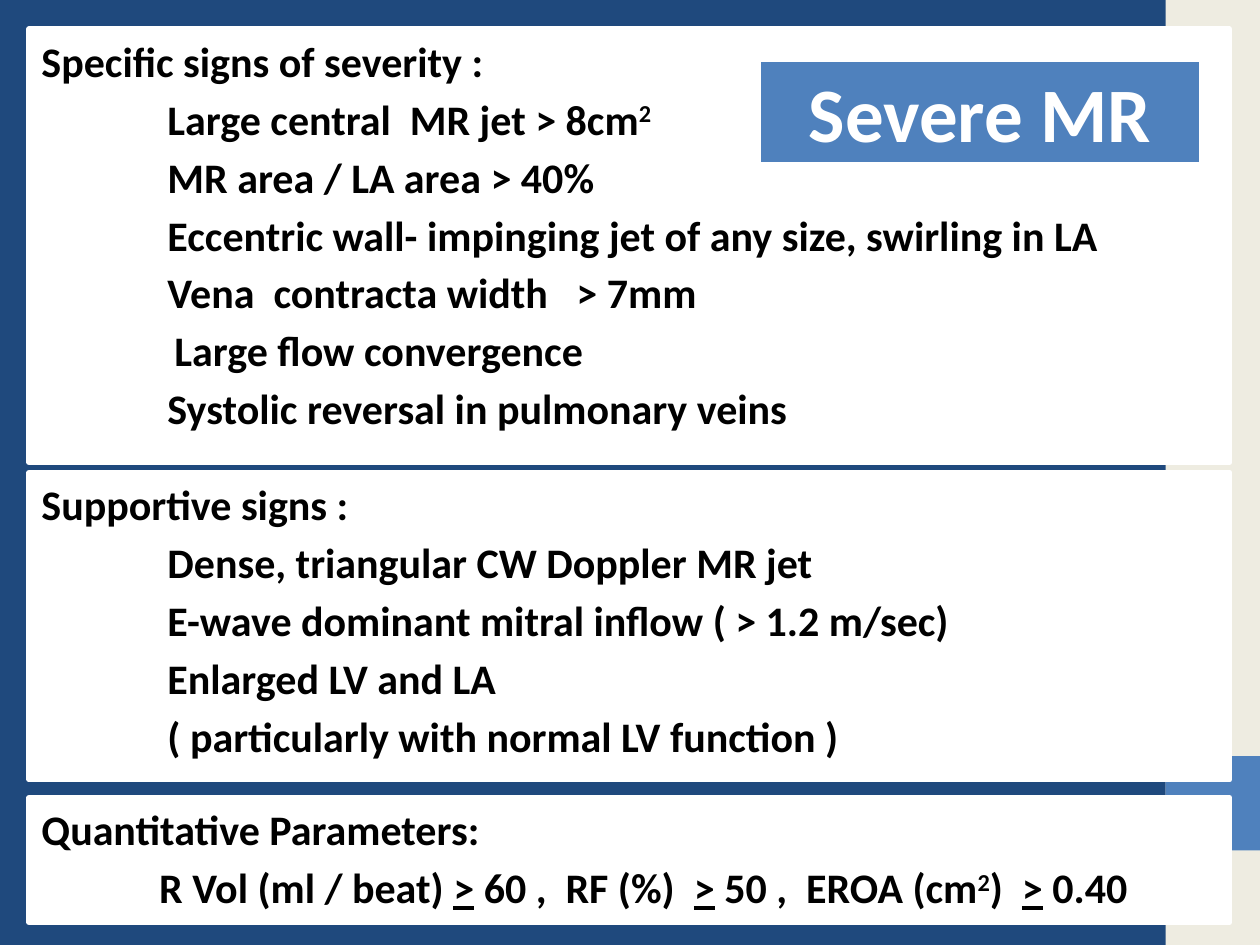
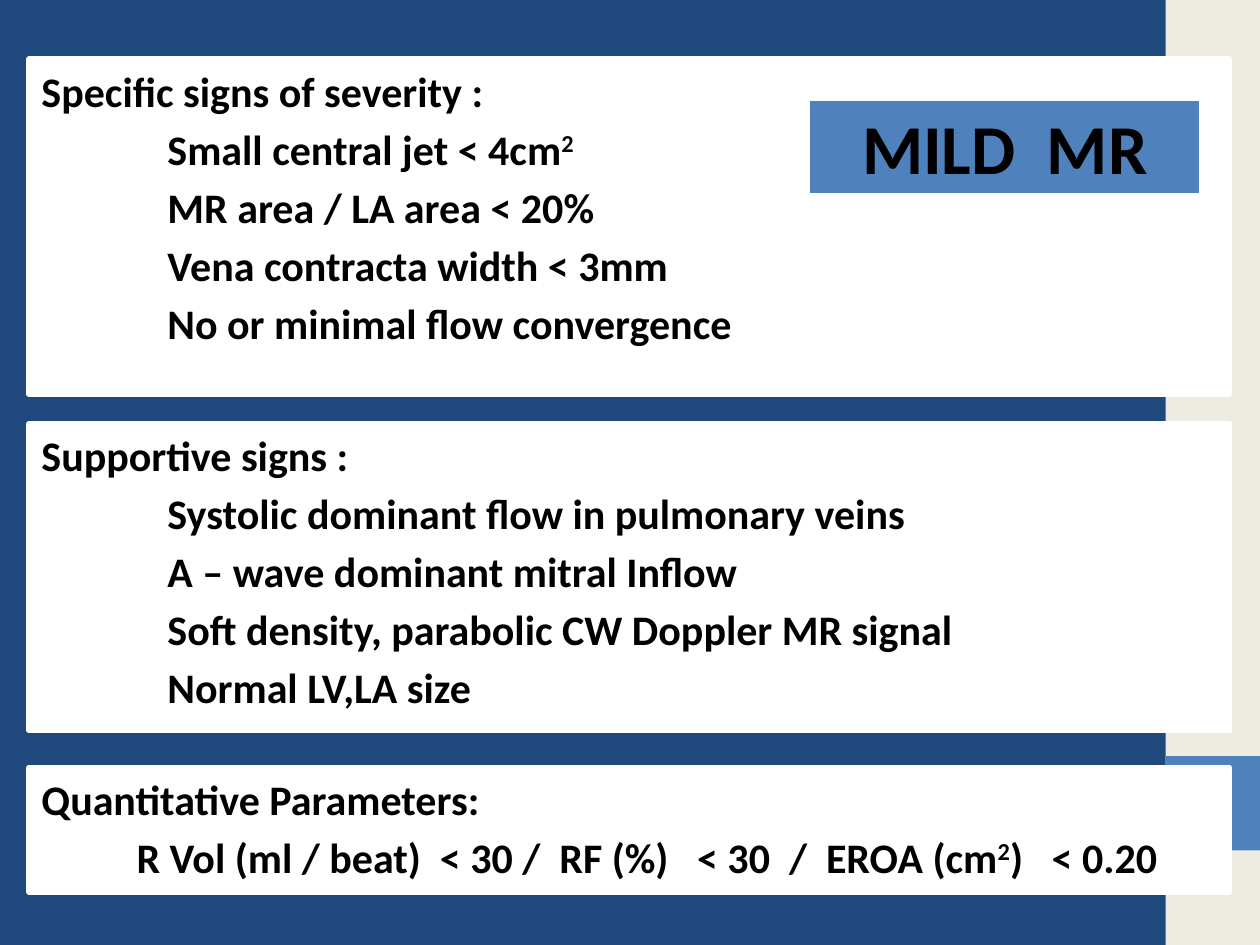
import pptx
import pptx.util
import pptx.dml.color
import pptx.enum.shapes
import pptx.enum.text

Pt = pptx.util.Pt

COLORS = {"navy": "1F497D", "cream": "EEECE1", "blue": "4F81BD", "white": "FFFFFF", "black": "000000"}
PANEL_LEFT, PANEL_WIDTH = 16.6, 686
ITEM_INDENT = 72


def rgb(name):
    return pptx.dml.color.RGBColor.from_string(COLORS[name])


# A "|" separates runs; a leading "^" raises a run and a leading "_" underlines it
def write(paragraph, text, size=24, color="black", indent=0, before=0, align="LEFT"):
    paragraph.alignment = getattr(pptx.enum.text.PP_ALIGN, align)
    paragraph.space_before = Pt(before)
    properties = paragraph._p.get_or_add_pPr()
    properties.set("marL", str(Pt(indent)))
    properties.set("indent", "0")
    for piece in text.split("|"):
        run = paragraph.add_run()
        run.text = piece.lstrip("^_")
        run.font.name = "Calibri"
        run.font.size = Pt(size)
        run.font.bold = True
        run.font.color.rgb = rgb(color)
        if piece.startswith("^"):
            run._r.get_or_add_rPr().set("baseline", "30000")
        if piece.startswith("_"):
            run.font.underline = True


# Each panel: top, height, heading, items as (indent, text)
slides = [
    {
        "title": ("Severe MR", 44, "white", (433.4, 33.8, 253.4, 60.5)),
        "panels": [
            (16.6, 247.7, "Specific signs of severity :", [
                (ITEM_INDENT, "Large central  MR jet > 8cm|^2"),
                (ITEM_INDENT, "MR area / LA area > 40%"),
                (ITEM_INDENT, "Eccentric wall- impinging jet of any size, swirling in LA"),
                (ITEM_INDENT, "Vena  contracta width   > 7mm"),
                (76, "Large flow convergence"),
                (ITEM_INDENT, "Systolic reversal in pulmonary veins"),
            ]),
            (270, 175.7, "Supportive signs :", [
                (ITEM_INDENT, "Dense, triangular CW Doppler MR jet"),
                (ITEM_INDENT, "E-wave dominant mitral inflow ( > 1.2 m/sec)"),
                (ITEM_INDENT, "Enlarged LV and LA"),
                (ITEM_INDENT, "( particularly with normal LV function )"),
            ]),
            (455.8, 71.3, "Quantitative Parameters:", [
                (67.3, "R Vol (ml / beat) |_>| 60 ,  RF (%)  |_>| 50 ,  EROA (cm|^2|)  |_>| 0.40"),
            ]),
        ],
    },
    {
        "title": ("MILD  MR", 40, "black", (461.5, 56.2, 225.4, 55.4)),
        "panels": [
            (33.8, 191.5, "Specific signs of severity :", [
                (ITEM_INDENT, "Small central jet < 4cm|^2"),
                (ITEM_INDENT, "MR area / LA area < 20%"),
                (ITEM_INDENT, "Vena contracta width < 3mm"),
                (ITEM_INDENT, "No or minimal flow convergence"),
            ]),
            (242, 175.7, "Supportive signs :", [
                (ITEM_INDENT, "Systolic dominant flow in pulmonary veins"),
                (ITEM_INDENT, "A – wave dominant mitral Inflow"),
                (ITEM_INDENT, "Soft density, parabolic CW Doppler MR signal"),
                (ITEM_INDENT, "Normal LV,LA size"),
            ]),
            (438.5, 71.3, "Quantitative Parameters:", [
                (54.3, "R Vol (ml / beat)  < 30 /  RF (%)   < 30  /  EROA (cm|^2|)   < 0.20"),
            ]),
        ],
    },
]

presentation = pptx.Presentation()
presentation.slide_width, presentation.slide_height = Pt(720), Pt(540)
background = presentation.slide_master.background.fill
background.solid()
background.fore_color.rgb = rgb("navy")

for content in slides:
    slide = presentation.slides.add_slide(presentation.slide_layouts[6])
    title, title_size, title_color, title_place = content["title"]
    heading_panel, *lower_panels = content["panels"]

    # Boxes from back to front: side bands, first panel, title, lower panels
    title_lines = [(title, {"size": title_size, "color": title_color, "align": "CENTER"})]
    boxes = [
        ((666, 0, 54, 540), "cream", []),
        ((666, 432, 54, 54), "blue", []),
    ]
    for top, height, heading, items in content["panels"]:
        lines = [(heading, {})] + [(item, {"indent": indent, "before": 4.3}) for indent, item in items]
        boxes.append(((PANEL_LEFT, top, PANEL_WIDTH, height), "white", lines))
    boxes.insert(3, (title_place, "blue", title_lines))

    for place, fill, lines in boxes:
        box = slide.shapes.add_shape(pptx.enum.shapes.MSO_SHAPE.RECTANGLE, *map(Pt, place))
        box.shadow.inherit = False
        box.fill.solid()
        box.fill.fore_color.rgb = rgb(fill)
        if not lines:
            box.line.fill.background()
            continue
        box.line.color.rgb = rgb("white")
        box.line.width = Pt(3)
        frame = box.text_frame
        frame.word_wrap = True
        frame.vertical_anchor = pptx.enum.text.MSO_ANCHOR.TOP
        for number, (text, style) in enumerate(lines):
            paragraph = frame.add_paragraph() if number else frame.paragraphs[0]
            write(paragraph, text, **style)

presentation.save("out.pptx")
